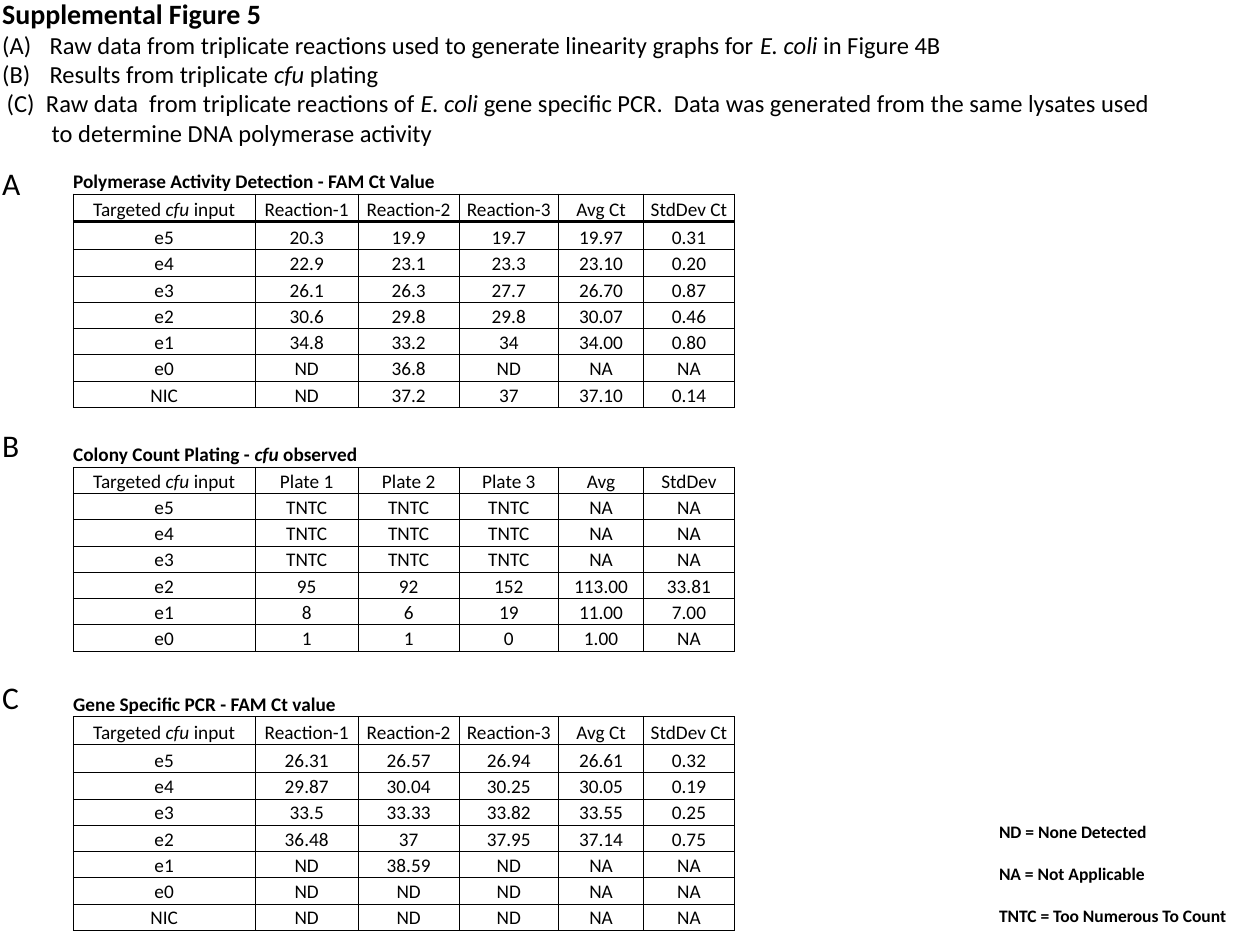
from lxml.etree import SubElement
from pptx import Presentation
from pptx.dml.color import RGBColor
from pptx.enum.text import MSO_ANCHOR as Anchor, PP_ALIGN as Align
from pptx.oxml.ns import qn
from pptx.util import Pt

FONT = "Calibri"
BLACK = "000000"
NO_GRID_STYLE = "{2D5ABB26-0587-4C30-8999-92F81FD0307C}"
TABLE_LEFT = 41.8
COLUMN_WIDTHS = [104, 59, 57.5, 57, 48.5, 52]
ROW_HEIGHT = 15
LABEL_LEFT = -5.8

CT_HEADER = "Targeted *cfu* input|Reaction-1|Reaction-2|Reaction-3|Avg Ct|StdDev Ct"

# label, label top, table top, title, title span, row heights that differ,
# line width below the header, rows
PANELS = [
    ("A", 90, 95.8, "Polymerase Activity Detection - FAM Ct Value", 4, {1: 16, 2: 16}, 2, [
        CT_HEADER,
        "e5|20.3|19.9|19.7|19.97|0.31",
        "e4|22.9|23.1|23.3|23.10|0.20",
        "e3|26.1|26.3|27.7|26.70|0.87",
        "e2|30.6|29.8|29.8|30.07|0.46",
        "e1|34.8|33.2|34|34.00|0.80",
        "e0|ND|36.8|ND|NA|NA",
        "NIC|ND|37.2|37|37.10|0.14",
    ]),
    ("B", 239.8, 252, "Colony Count Plating - *cfu *observed", 4, {}, 0.5, [
        "Targeted *cfu* input|Plate 1|Plate 2|Plate 3|Avg|StdDev",
        "e5|TNTC|TNTC|TNTC|NA|NA",
        "e4|TNTC|TNTC|TNTC|NA|NA",
        "e3|TNTC|TNTC|TNTC|NA|NA",
        "e2|95|92|152|113.00|33.81",
        "e1|8|6|19|11.00|7.00",
        "e0|1|1|0|1.00|NA",
    ]),
    ("C", 383.8, 394.6, "Gene Specific PCR - FAM Ct value", 3, {1: 16, 2: 16}, 0.5, [
        CT_HEADER,
        "e5|26.31|26.57|26.94|26.61|0.32",
        "e4|29.87|30.04|30.25|30.05|0.19",
        "e3|33.5|33.33|33.82|33.55|0.25",
        "e2|36.48|37|37.95|37.14|0.75",
        "e1|ND|38.59|ND|NA|NA",
        "e0|ND|ND|ND|NA|NA",
        "NIC|ND|ND|ND|NA|NA",
    ]),
]

# text, left margin, first-line indent, numbered
CAPTION_ITEMS = [
    ("Raw data from triplicate reactions used to generate linearity graphs for "
     "*E. coli *in Figure 4B", 27, -27, True),
    ("Results from triplicate *cfu* plating", 27, -27, True),
    ("(C)\tRaw data  from triplicate reactions of *E. coli *gene specific PCR.  "
     "Data was generated from the same lysates used", 25, -22.5, False),
    ("to determine DNA polymerase activity", 28.3, 0, False),
]

LEGEND = ["ND = None Detected", "NA = Not Applicable", "TNTC = Too Numerous To Count"]


def color(hex_code):
    return RGBColor.from_string(hex_code)


def write(paragraph, text, size, bold=False):
    """Add text in which asterisks enclose italic parts."""
    for index, part in enumerate(text.split("*")):
        if not part:
            continue
        run = paragraph.add_run()
        run.text = part
        font_format = {"name": FONT, "size": Pt(size), "bold": bold, "italic": index % 2 == 1}
        for attribute, value in font_format.items():
            setattr(run.font, attribute, value)
        run.font.color.rgb = color(BLACK)


def add_text_frame(slide, *bounds):
    frame = slide.shapes.add_textbox(*map(Pt, bounds)).text_frame
    frame.word_wrap = True
    return frame


def indent(paragraph, margin, first_line, numbered):
    properties = paragraph._p.get_or_add_pPr()
    properties.set("marL", str(Pt(margin)))
    properties.set("indent", str(Pt(first_line)))
    if numbered:
        SubElement(properties, qn("a:buFont"), typeface="+mj-lt")
        SubElement(properties, qn("a:buAutoNum"), type="alphaUcParenBoth")
    else:
        SubElement(properties, qn("a:buNone"))


def add_caption(slide):
    frame = add_text_frame(slide, LABEL_LEFT, -5.8, 680, 147.6)
    write(frame.paragraphs[0], "Supplemental Figure 5", 16, bold=True)
    for text, *layout in CAPTION_ITEMS:
        paragraph = frame.add_paragraph()
        indent(paragraph, *layout)
        write(paragraph, text, 14)


def set_borders(cell, **widths):
    """Draw the given sides; names are L, R, T and B."""
    properties = cell._tc.get_or_add_tcPr()
    for position, side in enumerate(s for s in "LRTB" if s in widths):
        line = SubElement(properties, qn("a:ln" + side), w=str(Pt(widths[side])))
        fill = SubElement(line, qn("a:solidFill"))
        SubElement(fill, qn("a:srgbClr"), val=BLACK)
        properties.insert(position, line)


def format_cell(cell):
    cell.margin_left = cell.margin_right = cell.margin_top = cell.margin_bottom = 0
    cell.vertical_anchor = Anchor.BOTTOM
    cell.fill.background()


def add_data_table(slide, top, title, title_span, tall_rows, header_line, rows):
    heights = [tall_rows.get(i, ROW_HEIGHT) for i in range(len(rows) + 1)]
    frame = slide.shapes.add_table(
        len(heights), len(COLUMN_WIDTHS), Pt(TABLE_LEFT), Pt(top),
        Pt(sum(COLUMN_WIDTHS)), Pt(sum(heights)))
    table = frame.table
    table.first_row = table.horz_banding = False
    table._tbl.tblPr.find(qn("a:tableStyleId")).text = NO_GRID_STYLE
    for column, width in zip(table.columns, COLUMN_WIDTHS):
        column.width = Pt(width)
    for row, height in zip(table.rows, heights):
        row.height = Pt(height)

    # Title row: only a rule below
    for index in range(len(COLUMN_WIDTHS)):
        cell = table.cell(0, index)
        format_cell(cell)
        set_borders(cell, B=0.5)
        paragraph = cell.text_frame.paragraphs[0]
        if index == 0:
            write(paragraph, title, 11, bold=True)
        else:
            SubElement(paragraph._p, qn("a:endParaRPr"), sz="1100")
    table.cell(0, 0).merge(table.cell(0, title_span - 1))

    # Header and data rows: full grid
    for row_index, row in enumerate(rows, start=1):
        above = header_line if row_index == 2 else 0.5
        below = header_line if row_index == 1 else 0.5
        for column_index, value in enumerate(row.split("|")):
            cell = table.cell(row_index, column_index)
            format_cell(cell)
            set_borders(cell, L=0.5, R=0.5, T=above, B=below)
            paragraph = cell.text_frame.paragraphs[0]
            paragraph.alignment = Align.CENTER
            write(paragraph, value, 11)


def add_legend(slide):
    frame = add_text_frame(slide, 563.8, 465.8, 150, 67.7)
    for index, entry in enumerate(LEGEND):
        paragraph = frame.add_paragraph() if index else frame.paragraphs[0]
        if index:
            paragraph.space_before = Pt(12)
        write(paragraph, entry, 10, bold=True)


def add_panel_label(slide, letter, top):
    frame = add_text_frame(slide, LABEL_LEFT, top, 25, 29)
    write(frame.paragraphs[0], letter, 18)


def main():
    deck = Presentation()
    deck.slide_width, deck.slide_height = Pt(720), Pt(540)
    slide = deck.slides.add_slide(deck.slide_layouts[6])

    add_caption(slide)
    for _, _, *table_content in PANELS:
        add_data_table(slide, *table_content)
    add_legend(slide)
    for letter, label_top, *_ in PANELS:
        add_panel_label(slide, letter, label_top)

    deck.save("out.pptx")


if __name__ == "__main__":
    main()
